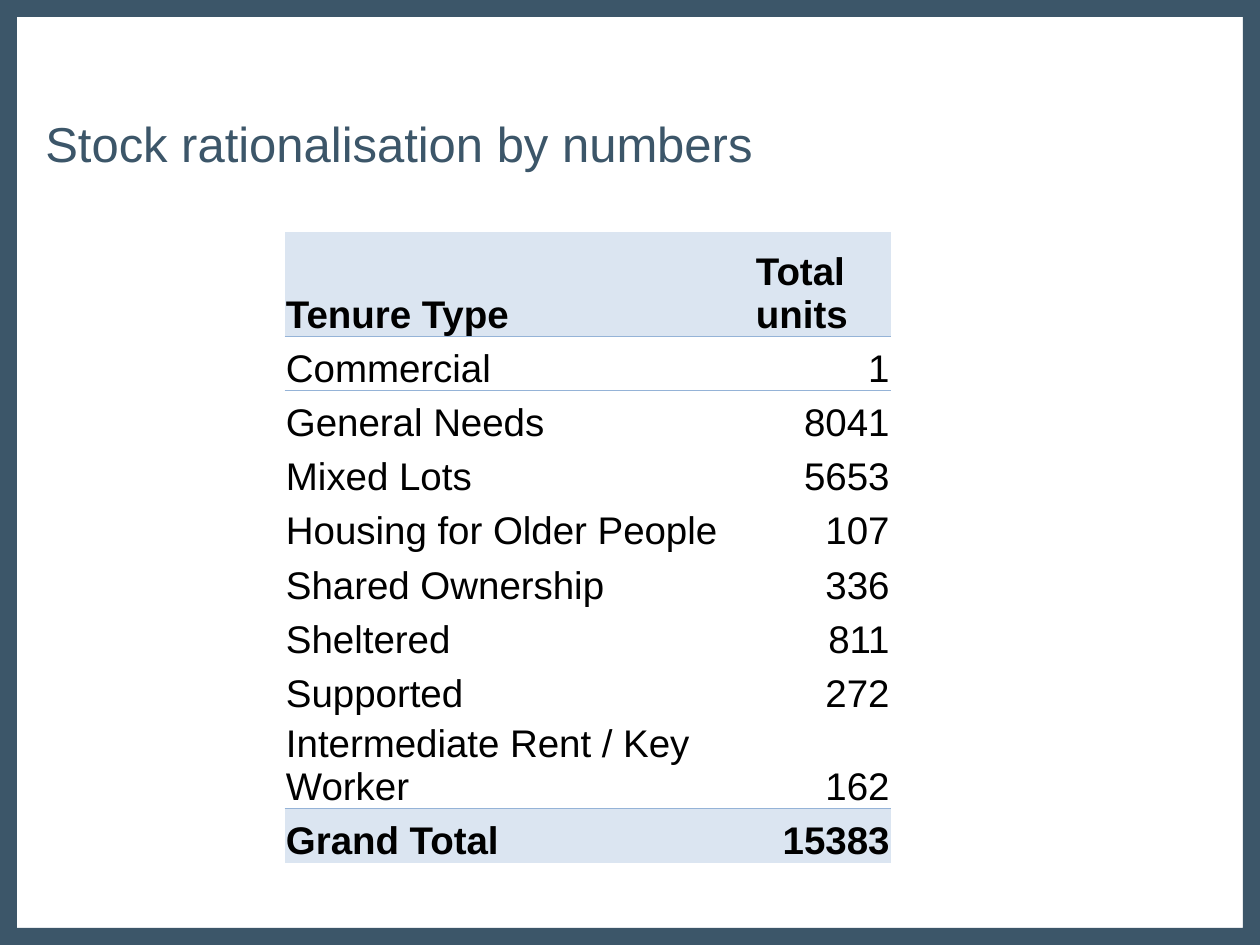
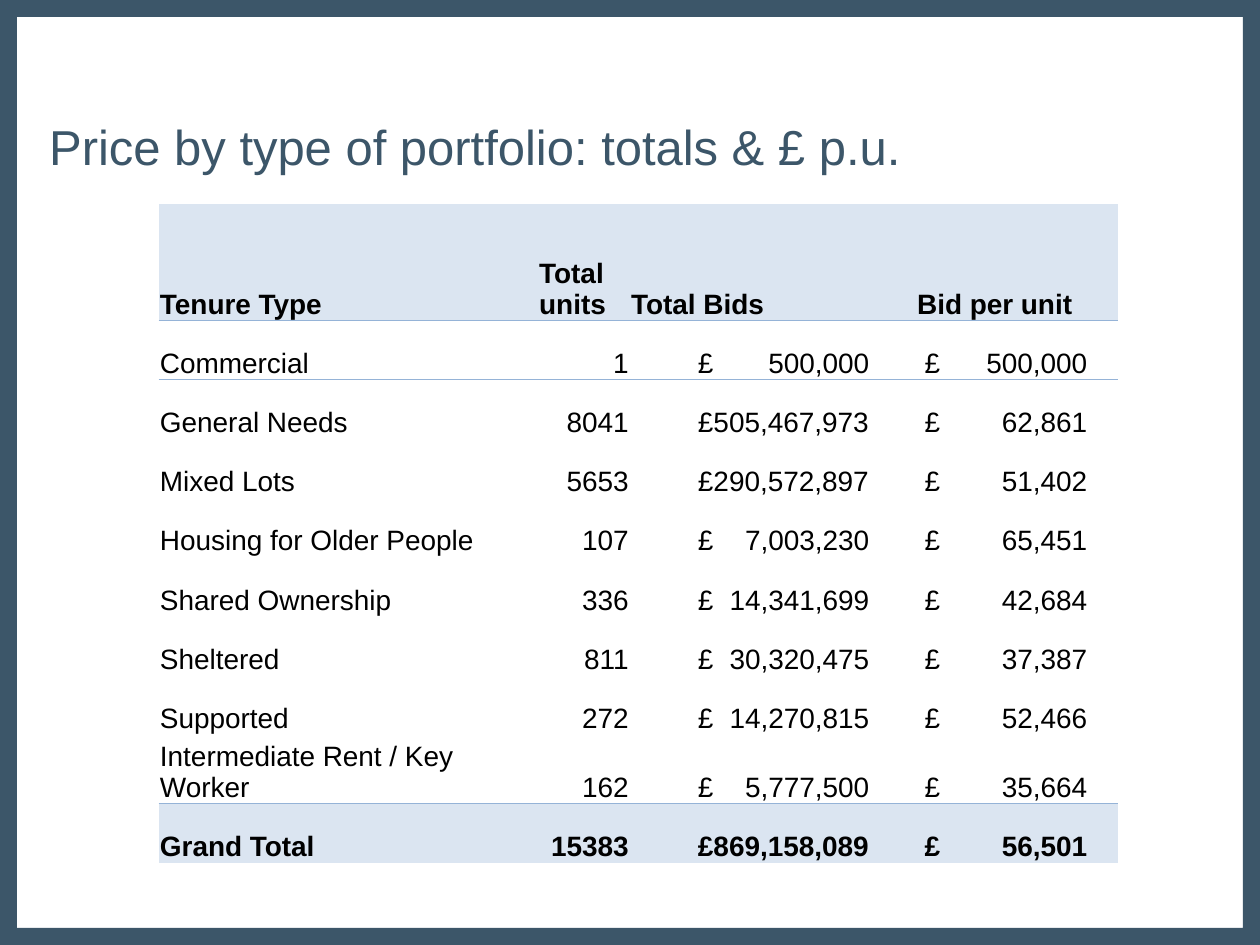
from lxml import etree
from pptx import Presentation
from pptx.dml.color import RGBColor
from pptx.enum import shapes, text
from pptx.oxml import ns
from pptx.util import Inches, Pt

SLATE, PALE_BLUE, RULE_BLUE, BLACK = "3C5669", "DBE5F1", "95B3D7", "000000"
FONT = "Arial"
PLAIN_TABLE = "{2D5ABB26-0587-4C30-8999-92F81FD0307C}"
EDGE = 0.01

TENURES = [
    ("Commercial", "1"),
    ("General Needs", "8041"),
    ("Mixed Lots", "5653"),
    ("Housing for Older People", "107"),
    ("Shared Ownership", "336"),
    ("Sheltered", "811"),
    ("Supported", "272"),
    ("Intermediate Rent / Key Worker", "162"),
    ("Grand Total", "15383"),
]
# A tab sets the pound sign apart from the amount where there is room
BIDS = [
    ("£\t500,000", "£\t500,000"),
    ("£505,467,973", "£\t62,861"),
    ("£290,572,897", "£\t51,402"),
    ("£\t7,003,230", "£\t65,451"),
    ("£\t14,341,699", "£\t42,684"),
    ("£\t30,320,475", "£\t37,387"),
    ("£\t14,270,815", "£\t52,466"),
    ("£\t5,777,500", "£\t35,664"),
    ("£869,158,089", "£\t56,501"),
]
HEADINGS = ("Tenure Type", "Total units", "Total Bids", "Bid per unit")
# Money column: (left inset, right tab stop)
MONEY_COLUMNS = {2: (0.54, 1.36), 3: (0.07, 1.29)}

PAGES = [
    dict(title="Stock rationalisation by numbers", title_at=(0.26, 0.78, 6.26, 0.64),
         rows=[HEADINGS[:2]] + TENURES, table_at=(2.26, 1.84), size=22,
         widths=(3.73, 1.08), heights=[0.83] + [0.43] * 7 + [0.74, 0.43]),
    dict(title="Price by type of portfolio: totals & £ p.u.", title_at=(0.29, 0.8, 7.41, 0.64),
         rows=[HEADINGS] + [tenure + bid for tenure, bid in zip(TENURES, BIDS)],
         table_at=(1.26, 1.62), size=16,
         widths=(3.01, 0.73, 2.27, 1.6), heights=[0.92] + [0.47] * 7 + [0.55, 0.47]),
]


def rgb(hex_color):
    return RGBColor.from_string(hex_color)


def rule(cell, side):
    """Draw a thin line on one side of a cell: "T" or "B"."""
    line = etree.Element(ns.qn(f"a:ln{side}"), w=str(Pt(0.5)))
    fill = etree.SubElement(line, ns.qn("a:solidFill"))
    etree.SubElement(fill, ns.qn("a:srgbClr"), val=RULE_BLUE)
    cell._tc.get_or_add_tcPr().insert(0, line)


prs = Presentation()
prs.slide_width, prs.slide_height = Inches(10), Inches(7.5)
title_only = prs.slide_layouts[5]

for page_index, page in enumerate(PAGES):
    slide = prs.slides.add_slide(title_only)

    # The border is made once and moved to the master, behind everything
    if page_index == 0:
        border = slide.shapes.add_shape(shapes.MSO_SHAPE.FRAME, 0, 0,
                                        prs.slide_width, prs.slide_height)
        border.adjustments[0] = 0.018
        border.shadow.inherit = False
        border.fill.solid()
        border.fill.fore_color.rgb = rgb(SLATE)
        border.line.fill.background()
        border.element.nvSpPr.cNvPr.set("id", "20")
        prs.slide_master.shapes.element.insert(2, border.element)

    title = slide.shapes.title
    title.left, title.top, title.width, title.height = map(Inches, page["title_at"])
    title_frame = title.text_frame
    title_frame.text = page["title"]
    title_frame.auto_size = text.MSO_AUTO_SIZE.NONE
    title_frame.vertical_anchor = text.MSO_ANCHOR.BOTTOM
    heading = title_frame.paragraphs[0]
    heading.alignment = text.PP_ALIGN.LEFT
    heading.font.name, heading.font.size = FONT, Pt(28)
    heading.font.color.rgb = rgb(SLATE)

    rows, widths, heights = page["rows"], page["widths"], page["heights"]
    left, top = page["table_at"]
    table = slide.shapes.add_table(len(rows), len(widths), Inches(left), Inches(top),
                                   Inches(sum(widths)), Inches(sum(heights))).table
    table.first_row = table.horz_banding = False
    table._tbl.tblPr.find(ns.qn("a:tableStyleId")).text = PLAIN_TABLE
    for column, width in zip(table.columns, widths):
        column.width = Inches(width)
    for row, height in zip(table.rows, heights):
        row.height = Inches(height)

    total_row = len(rows) - 1
    for r, values in enumerate(rows):
        for c, value in enumerate(values):
            cell = table.cell(r, c)
            cell.text = value
            cell.vertical_anchor = text.MSO_ANCHOR.BOTTOM
            cell.margin_left = cell.margin_right = cell.margin_top = Inches(EDGE)
            cell.margin_bottom = 0
            entry = cell.text_frame.paragraphs[0]

            if r > 0 and c == 1:
                entry.alignment = text.PP_ALIGN.RIGHT
            elif r > 0 and c in MONEY_COLUMNS:
                inset, stop = MONEY_COLUMNS[c]
                cell.margin_left = Inches(inset)
                tabs = etree.SubElement(entry._p.get_or_add_pPr(), ns.qn("a:tabLst"))
                etree.SubElement(tabs, ns.qn("a:tab"), pos=str(Inches(stop)), algn="r")

            entry.font.name, entry.font.size = FONT, Pt(page["size"])
            entry.font.color.rgb = rgb(BLACK)
            entry.font.bold = r in (0, total_row)

            if r in (0, total_row):
                cell.fill.solid()
                cell.fill.fore_color.rgb = rgb(PALE_BLUE)
            else:
                cell.fill.background()
            if r in (0, total_row - 1):
                rule(cell, "B")
            if r in (1, total_row):
                rule(cell, "T")

prs.save("out.pptx")
